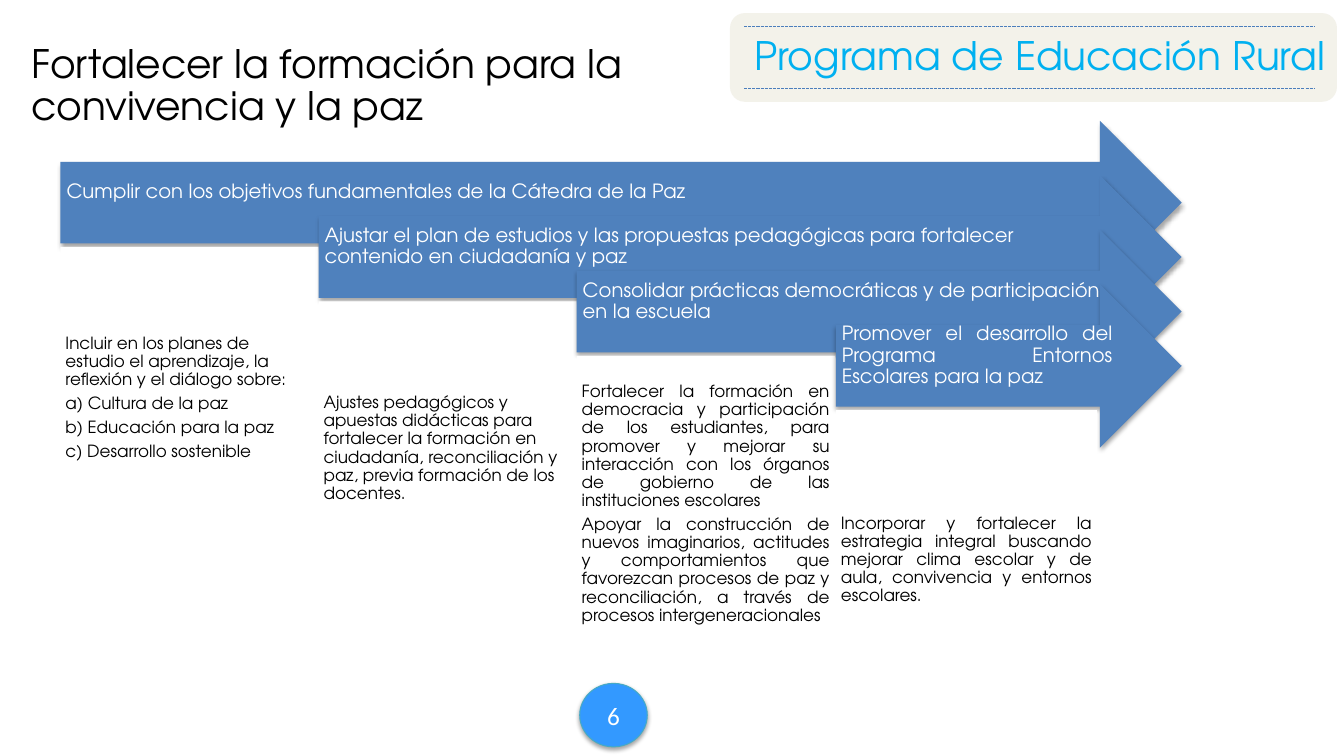
from dataclasses import dataclass

import lxml.etree
import pptx
import pptx.dml.color
import pptx.enum.shapes
import pptx.enum.text
import pptx.oxml.ns
import pptx.util

Kind = pptx.enum.shapes.MSO_SHAPE
Align = pptx.enum.text.PP_ALIGN
Anchor = pptx.enum.text.MSO_ANCHOR
Fit = pptx.enum.text.MSO_AUTO_SIZE
qn = pptx.oxml.ns.qn
SCALE = 9144


@dataclass(frozen=True)
class Theme:
    face: str = "TeX Gyre Adventor"
    digit: str = "Calibri"
    arrow: str = "4F81BD"
    white: str = "FFFFFF"
    black: str = "000000"
    panel: str = "EEECE1"
    cyan: str = "00B0F0"
    dash: str = "4B7EBC"
    badge: str = "3399FF"
    rim: str = "46AAC5"
    head: int = 28
    number: int = 18
    goal: int = 14
    body: int = 12


THEME = Theme()


@dataclass(frozen=True)
class Step:
    goal: str
    notes: tuple[str, ...]
    width: int
    height: int
    goal_align: Align = Align.LEFT
    note_align: Align = Align.LEFT


STEPS = (
    Step(
        "Cumplir con los objetivos fundamentales de la Cátedra de la Paz",
        (
            "Incluir en los planes de estudio el aprendizaje, la reflexión y el diálogo sobre:",
            "a) Cultura de la paz",
            "b) Educación para la paz",
            "c) Desarrollo sostenible",
        ),
        256, 300, goal_align=Align.JUSTIFY,
    ),
    Step(
        "Ajustar el plan de estudios y las propuestas pedagógicas para fortalecer "
        "contenido en ciudadanía y paz",
        (
            "Ajustes pedagógicos y apuestas didácticas para fortalecer la formación en "
            "ciudadanía, reconciliación y paz, previa formación de los docentes.",
        ),
        256, 292,
    ),
    Step(
        "Consolidar prácticas democráticas y de participación en la escuela",
        (
            "Fortalecer la formación en democracia y participación de los estudiantes, "
            "para promover y mejorar su interacción con los órganos de gobierno de las "
            "instituciones escolares",
            "Apoyar la construcción de nuevos imaginarios, actitudes y comportamientos "
            "que favorezcan procesos de paz y reconciliación, a través de procesos "
            "intergeneracionales",
        ),
        256, 294, note_align=Align.JUSTIFY,
    ),
    Step(
        "Promover el desarrollo del Programa Entornos Escolares para la paz",
        (
            "Incorporar y fortalecer la estrategia integral buscando mejorar clima "
            "escolar y de aula, convivencia y entornos escolares.",
        ),
        259, 297, goal_align=Align.JUSTIFY, note_align=Align.JUSTIFY,
    ),
)


def px(*vals: int) -> list[int]:
    return [pptx.util.Emu(val * SCALE) for val in vals]


def rgb(code: str) -> pptx.dml.color.RGBColor:
    return pptx.dml.color.RGBColor.from_string(code)


def write(shape, *lines: str, size: int, color: str, face: str = THEME.face,
          align: Align = Align.LEFT, anchor: Anchor = Anchor.MIDDLE,
          inset: tuple[int, ...] = (10, 5, 10, 5), tight: bool = True,
          fit: Fit = Fit.NONE) -> None:
    frame = shape.text_frame
    frame.word_wrap = True
    frame.auto_size = fit
    frame.vertical_anchor = anchor
    (frame.margin_left, frame.margin_top,
     frame.margin_right, frame.margin_bottom) = px(*inset)
    for rank, line in enumerate(lines):
        para = frame.add_paragraph() if rank else frame.paragraphs[0]
        para.alignment = align
        if tight:
            para.line_spacing = 0.9
            para.space_after = pptx.util.Pt(size * 0.35)
        run = para.add_run()
        run.text = line
        run.font.name = face
        run.font.size = pptx.util.Pt(size)
        run.font.color.rgb = rgb(color)


def draw(slide, kind: Kind, box: tuple[int, ...], fill: str,
         rim: str = "", shade: bool = False):
    shape = slide.shapes.add_shape(kind, *px(*box))
    shape.fill.solid()
    shape.fill.fore_color.rgb = rgb(fill)
    if rim:
        shape.line.color.rgb = rgb(rim)
        shape.line.width = pptx.util.Pt(0.75)
    else:
        shape.line.fill.background()
    shape.shadow.inherit = False
    if shade:
        list_ = shape._element.spPr.find(qn("a:effectLst"))
        cast = lxml.etree.SubElement(
            list_, qn("a:outerShdw"), blurRad="40000", dist="23000",
            dir="5400000", rotWithShape="0")
        tint = lxml.etree.SubElement(cast, qn("a:srgbClr"), val=THEME.black)
        lxml.etree.SubElement(tint, qn("a:alpha"), val="35000")
    return shape


def add_step(slide, rank: int, step: Step) -> None:
    left = 60 + 769 * rank // 3
    drop = 54 * rank
    arrow = draw(slide, Kind.RIGHT_ARROW, (left, 120 + drop, 1172 - left, 162),
                 THEME.arrow, shade=True)
    write(arrow, step.goal, size=THEME.goal, color=THEME.white,
          align=step.goal_align, inset=(6, 6, 28, 26))
    note = draw(slide, Kind.RECTANGLE,
                (left, 245 + drop, step.width, step.height), THEME.white)
    write(note, *step.notes, size=THEME.body, color=THEME.black,
          align=step.note_align, inset=(5, 5, 5, 5))


def add_rule(slide, top: int) -> None:
    rule = slide.shapes.add_connector(
        pptx.enum.shapes.MSO_CONNECTOR.STRAIGHT, *px(738, top, 1304, top))
    rule.line.color.rgb = rgb(THEME.dash)
    rule.line.width = pptx.util.Pt(0.75)
    rule.line.dash_style = pptx.enum.dml.MSO_LINE.SQUARE_DOT
    lxml.etree.SubElement(rule._element.spPr, qn("a:effectLst"))


def add_banner(slide) -> None:
    panel = draw(slide, Kind.ROUNDED_RECTANGLE, (724, 13, 602, 88), THEME.panel)
    tint = panel._element.spPr.find(qn("a:solidFill"))[0]
    lxml.etree.SubElement(tint, qn("a:alpha"), val="68000")
    label = slide.shapes.add_textbox(*px(738, 26, 595, 98))
    write(label, "Programa de Educación Rural", size=THEME.head,
          color=THEME.cyan, anchor=Anchor.TOP, tight=False,
          fit=Fit.SHAPE_TO_FIT_TEXT)
    for top in (26, 88):
        add_rule(slide, top)


def main() -> None:
    deck = pptx.Presentation()
    deck.slide_width, deck.slide_height = px(1333, 750)
    slide = deck.slides.add_slide(deck.slide_layouts[5])
    title = slide.shapes.title
    title.left, title.top, title.width, title.height = px(0, 26, 833, 120)
    write(title, "Fortalecer la formación para la convivencia y la paz",
          size=THEME.head, color=THEME.black, inset=(31, 18, 31, 18))
    for rank, step in enumerate(STEPS):
        add_step(slide, rank, step)
    add_banner(slide)
    badge = draw(slide, Kind.OVAL, (575, 678, 67, 63), THEME.badge,
                 rim=THEME.rim, shade=True)
    write(badge, "6", size=THEME.number, color=THEME.white, face=THEME.digit,
          align=Align.CENTER, tight=False)
    deck.save("out.pptx")


if __name__ == "__main__":
    main()
